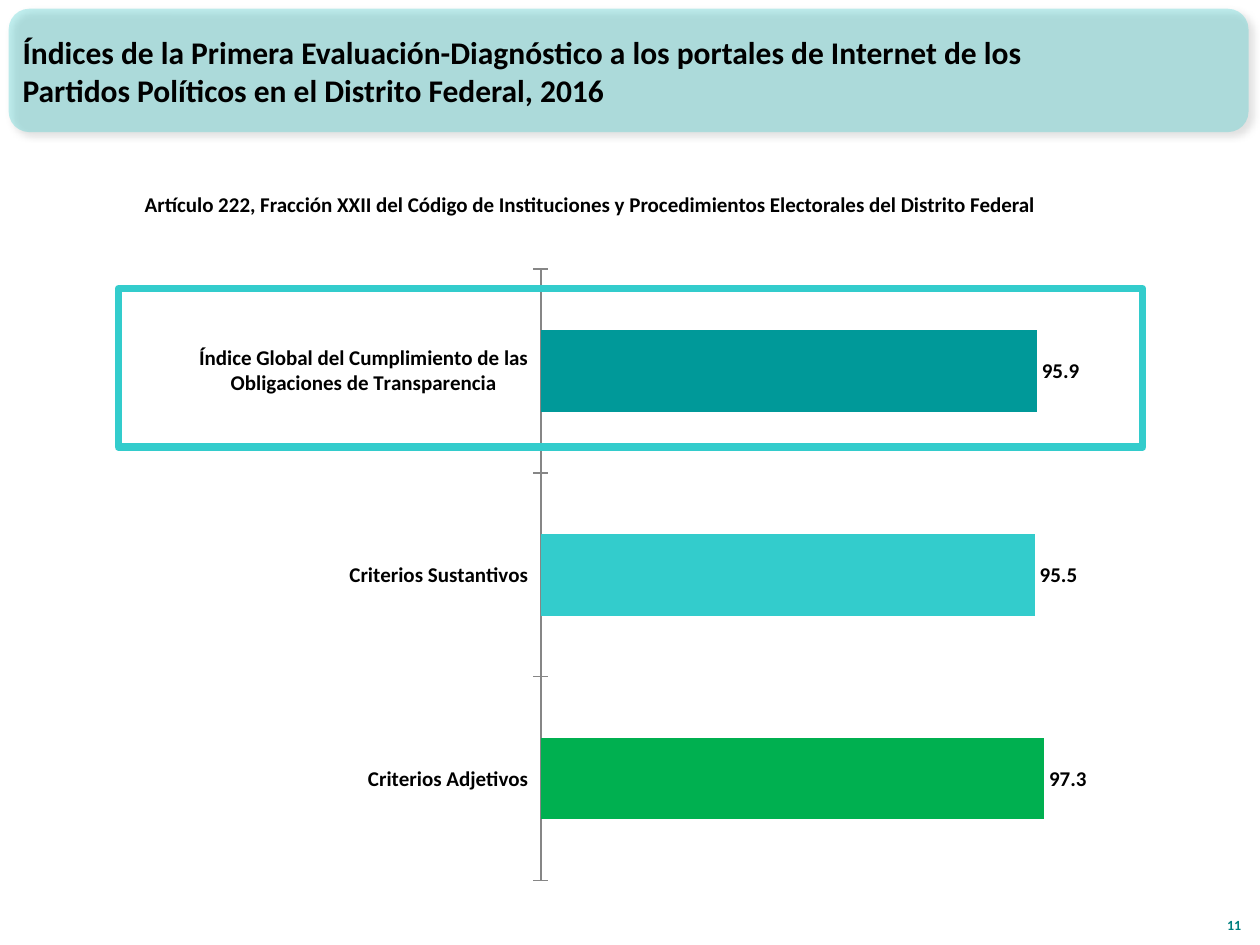
from dataclasses import dataclass

from lxml import etree
from pptx import Presentation
from pptx.chart.data import CategoryChartData
from pptx.dml.color import RGBColor
from pptx.enum.chart import XL_CHART_TYPE, XL_LABEL_POSITION, XL_TICK_LABEL_POSITION, XL_TICK_MARK
from pptx.enum.shapes import MSO_SHAPE
from pptx.enum.text import MSO_ANCHOR, PP_ALIGN
from pptx.oxml import parse_xml
from pptx.oxml.ns import nsdecls, qn
from pptx.util import Pt

BAR = XL_CHART_TYPE.BAR_CLUSTERED
OUTSIDE = XL_LABEL_POSITION.OUTSIDE_END
LOW = XL_TICK_LABEL_POSITION.LOW
CROSS, NO_TICK = XL_TICK_MARK.CROSS, XL_TICK_MARK.NONE
RECT, ROUNDED = MSO_SHAPE.RECTANGLE, MSO_SHAPE.ROUNDED_RECTANGLE
TOP, MIDDLE, BOTTOM = MSO_ANCHOR.TOP, MSO_ANCHOR.MIDDLE, MSO_ANCHOR.BOTTOM
LEFT, RIGHT = PP_ALIGN.LEFT, PP_ALIGN.RIGHT


@dataclass(frozen=True)
class Theme:
    font: str = "Calibri"
    text: str = "000000"
    number: str = "008080"
    accent: str = "33CCCC"
    axis: str = "868686"
    bars: tuple = ("009999", "33CCCC", "00B050")
    title_size: float = 18
    body_size: float = 12
    number_size: float = 8


THEME = Theme()


def rgb(code):
    return RGBColor.from_string(code)


def set_font(font, size, color):
    values = {"name": THEME.font, "size": Pt(size), "bold": True}
    for name, value in values.items():
        setattr(font, name, value)
    font.color.rgb = rgb(color)


def add_text(s, box, text, size, color=THEME.text, anchor=TOP, align=LEFT):
    tf = s.shapes.add_textbox(*map(Pt, box)).text_frame
    tf.word_wrap = True
    tf.vertical_anchor = anchor
    p = tf.paragraphs[0]
    p.alignment = align
    r = p.add_run()
    r.text = text
    set_font(r.font, size, color)


def add_banner(s, box):
    sp = s.shapes.add_shape(ROUNDED, *map(Pt, box))
    sp.line.fill.background()
    sp.fill.solid()
    sp.fill.fore_color.rgb = rgb(THEME.accent)
    # Translucent fill and a soft shadow to the lower right
    color = sp._element.spPr.find(qn("a:solidFill"))[0]
    etree.SubElement(color, qn("a:alpha"), val="30000")
    sp._element.spPr.append(parse_xml(
        f'<a:effectLst {nsdecls("a")}><a:outerShdw blurRad="{Pt(4)}" dist="{Pt(3)}" '
        'dir="2700000" algn="tl" rotWithShape="0"><a:srgbClr val="000000">'
        '<a:alpha val="40000"/></a:srgbClr></a:outerShdw></a:effectLst>'))


def add_frame(s, box):
    sp = s.shapes.add_shape(RECT, *map(Pt, box))
    sp.shadow.inherit = False
    sp.fill.background()
    sp.line.color.rgb = rgb(THEME.accent)
    sp.line.width = Pt(4.25)
    etree.SubElement(sp.line._get_or_add_ln(), qn("a:round"))


def set_plot_layout(chart, x, y, w, h):
    area = chart._chartSpace.chart.plotArea
    for old in area.findall(qn("c:layout")):
        area.remove(old)
    sizes = "".join(f'<c:{k} val="{v}"/>' for k, v in zip("xywh", (x, y, w, h)))
    area.insert(0, parse_xml(
        f'<c:layout {nsdecls("c")}><c:manualLayout><c:layoutTarget val="inner"/>'
        f'<c:xMode val="edge"/><c:yMode val="edge"/>{sizes}</c:manualLayout></c:layout>'))


def add_index_chart(s, box, indices):
    data = CategoryChartData(number_format="0.0")
    data.categories = list(indices)
    data.add_series("Series 1", list(indices.values()))
    chart = s.shapes.add_chart(BAR, *map(Pt, box), data).chart
    chart.has_legend = chart.has_title = False
    set_font(chart.font, THEME.body_size, THEME.text)
    set_plot_layout(chart, 0.414, 0.03, 0.51, 0.941)

    # Axes
    formats = {
        chart.category_axis: {"reverse_order": True, "major_tick_mark": CROSS,
                              "minor_tick_mark": NO_TICK, "tick_label_position": LOW,
                              "has_major_gridlines": False},
        chart.value_axis: {"visible": False, "minimum_scale": 0, "maximum_scale": 100,
                           "has_major_gridlines": False},
    }
    for axis, values in formats.items():
        for name, value in values.items():
            setattr(axis, name, value)
    line = chart.category_axis.format.line
    line.color.rgb = rgb(THEME.axis)
    line.width = Pt(0.75)

    # Bars and their values
    plot = chart.plots[0]
    for name, value in {"gap_width": 150, "overlap": -25, "vary_by_categories": False,
                        "has_data_labels": True}.items():
        setattr(plot, name, value)
    for name, value in {"show_value": True, "number_format": "0.0",
                        "number_format_is_linked": False, "position": OUTSIDE}.items():
        setattr(plot.data_labels, name, value)
    set_font(plot.data_labels.font, THEME.body_size, THEME.text)
    series = plot.series[0]
    series.invert_if_negative = False
    for i, color in enumerate(THEME.bars):
        fill = series.points[i].format.fill
        fill.solid()
        fill.fore_color.rgb = rgb(color)


def main():
    prs = Presentation()
    prs.slide_width, prs.slide_height = Pt(720), Pt(540)
    s = prs.slides.add_slide(prs.slide_layouts[6])

    # Background band
    add_banner(s, (5, 5, 708.5, 70.5))

    # Chart, page number and highlight of the global index
    add_index_chart(s, (69.1, 142.6, 579.6, 371.5), {
        "Índice Global del Cumplimiento de las Obligaciones de Transparencia": 95.9,
        "Criterios Sustantivos": 95.5,
        "Criterios Adjetivos": 97.3,
    })
    add_text(s, (687.6, 508.3, 28.8, 28.8), "11", THEME.number_size, THEME.number,
             BOTTOM, RIGHT)
    add_frame(s, (67.7, 165, 585.3, 90.6))

    # Headings
    add_text(s, (75.6, 105.8, 568, 21.6),
             "Artículo 222, Fracción XXII del Código de Instituciones y Procedimientos "
             "Electorales del Distrito Federal", THEME.body_size)
    add_text(s, (5.8, 6.5, 595.4, 67.7),
             "Índices de la Primera Evaluación-Diagnóstico a los portales de Internet de "
             "los Partidos Políticos en el Distrito Federal, 2016", THEME.title_size,
             anchor=MIDDLE)

    prs.save("out.pptx")


if __name__ == "__main__":
    main()
